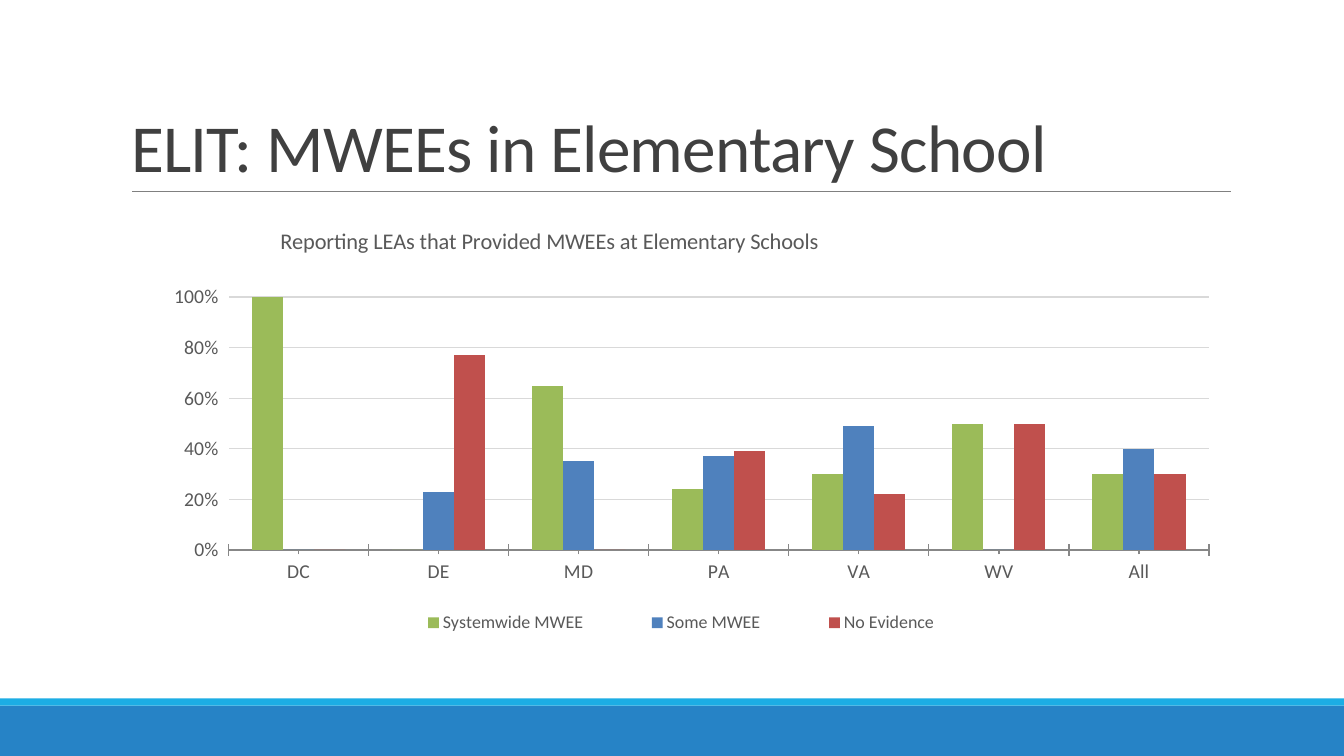
from lxml.etree import SubElement, Element
from pptx import Presentation
from pptx.chart.data import CategoryChartData
from pptx.dml.color import RGBColor
from pptx.enum.chart import XL_CHART_TYPE, XL_LEGEND_POSITION, XL_TICK_MARK
from pptx.enum.shapes import MSO_CONNECTOR, MSO_SHAPE
from pptx.enum.text import MSO_ANCHOR, MSO_AUTO_SIZE, PP_ALIGN
from pptx.oxml.ns import qn
from pptx.util import Inches, Pt

TITLE = "ELIT: MWEEs in Elementary School"
CHART_TITLE = "Reporting LEAs that Provided MWEEs at Elementary Schools"
STATES = ["DC", "DE", "MD", "PA", "VA", "WV", "All"]
EVIDENCE = [  # name, colour key, share per state
    ("Systemwide MWEE", "green", [1, 0, 0.65, 0.24, 0.3, 0.5, 0.3]),
    ("Some MWEE", "blue", [0, 0.23, 0.35, 0.37, 0.49, 0, 0.4]),
    ("No Evidence", "red", [0, 0.77, 0, 0.39, 0.22, 0.5, 0.3]),
]
FOOTER_BANDS = [("band", 7, 0.5), ("stripe", 6.93, 0.07)]  # colour key, top, height

# Fractions of the chart frame: x, y and, where sized, width and height
TITLE_LAYOUT = {"x": 0.14, "y": 0.04}
LEGEND_LAYOUT = {"x": 0.22, "y": 0.9, "w": 0.57, "h": 0.09}
PLOT_LAYOUT = {"x": 0.097, "y": 0.211, "w": 0.884, "h": 0.57}

SLIDE_W, SLIDE_H = 13.33, 7.5
THEME = {
    "font": "Calibri",
    "colors": {
        "band": "2683C6", "stripe": "1CADE4", "rule": "808080",
        "title": "404040", "label": "595959", "axis": "878787", "grid": "D9D9D9",
        "green": "9BBB59", "blue": "4F81BD", "red": "C0504D",
    },
    "sizes": {"title": 48, "chart_title": 16, "axis": 14, "legend": 12.8},
}


def color(key):
    return RGBColor.from_string(THEME["colors"][key])


def style_font(font, size, color_key):
    formats = {"name": THEME["font"], "size": Pt(THEME["sizes"][size]), "bold": False}
    for name, value in formats.items():
        setattr(font, name, value)
    font.color.rgb = color(color_key)


def style_line(line, color_key, width):
    line.color.rgb = color(color_key)
    line.width = Pt(width)


def place(parent, index, fractions, inner=False):
    """Give a chart part a manual layout, inserted as child number index."""
    for old in parent.findall(qn("c:layout")):
        parent.remove(old)
    layout = Element(qn("c:layout"))
    manual = SubElement(layout, qn("c:manualLayout"))
    if inner:
        SubElement(manual, qn("c:layoutTarget")).set("val", "inner")
    for axis in "xy":
        SubElement(manual, qn(f"c:{axis}Mode")).set("val", "edge")
    for name, value in fractions.items():
        SubElement(manual, qn(f"c:{name}")).set("val", str(value))
    parent.insert(index, layout)


def add_frame(slide):
    for key, top, height in FOOTER_BANDS:
        sp = slide.shapes.add_shape(MSO_SHAPE.RECTANGLE, 0, Inches(top),
                                    Inches(SLIDE_W), Inches(height))
        sp.shadow.inherit = False
        sp.fill.solid()
        sp.fill.fore_color.rgb = color(key)
        sp.line.fill.background()
    rule = slide.shapes.add_connector(MSO_CONNECTOR.STRAIGHT, Inches(1.31), Inches(1.9),
                                      Inches(12.21), Inches(1.9))
    style_line(rule.line, "rule", 0.5)
    SubElement(rule.element.spPr, qn("a:effectLst"))


def add_title(slide):
    sp = slide.shapes.title
    box = {"left": 1.2, "top": 0.31, "width": 11, "height": 1.59}
    for name, value in box.items():
        setattr(sp, name, Inches(value))
    tf = sp.text_frame
    formats = {"word_wrap": True, "auto_size": MSO_AUTO_SIZE.NONE,
               "vertical_anchor": MSO_ANCHOR.BOTTOM}
    for name, value in formats.items():
        setattr(tf, name, value)
    p = tf.paragraphs[0]
    p.alignment = PP_ALIGN.LEFT
    p.line_spacing = 0.85
    r = p.add_run()
    r.text = TITLE
    style_font(r.font, "title", "title")
    r.font.element.set("spc", "-50") if hasattr(r.font, "element") else \
        p.runs[0].text and p.font and r.font


def add_evidence_chart(slide):
    data = CategoryChartData(number_format="0%")
    data.categories = STATES
    for name, _, shares in EVIDENCE:
        data.add_series(name, shares)
    chart = slide.shapes.add_chart(XL_CHART_TYPE.COLUMN_CLUSTERED, Inches(1.2), Inches(2.02),
                                   Inches(11), Inches(4.4), data).chart
    style_font(chart.font, "axis", "label")

    plot = chart.plots[0]
    for name, value in {"gap_width": 150, "overlap": 0, "vary_by_categories": False}.items():
        setattr(plot, name, value)
    for series, (_, key, _) in zip(plot.series, EVIDENCE):
        series.format.fill.solid()
        series.format.fill.fore_color.rgb = color(key)

    states, shares = chart.category_axis, chart.value_axis
    for axis in (states, shares):
        axis.major_tick_mark = XL_TICK_MARK.CROSS
        style_font(axis.tick_labels.font, "axis", "label")
    states.minor_tick_mark = XL_TICK_MARK.OUTSIDE
    style_line(states.format.line, "axis", 1)
    scale = {"minimum_scale": 0, "maximum_scale": 1, "major_unit": 0.2}
    for name, value in scale.items():
        setattr(shares, name, value)
    shares.tick_labels.number_format = "0%"
    shares.tick_labels.number_format_is_linked = False
    shares.format.line.fill.background()
    style_line(shares.major_gridlines.format.line, "grid", 1)

    chart.has_title = True
    p = chart.chart_title.text_frame.paragraphs[0]
    r = p.add_run()
    r.text = CHART_TITLE
    style_font(r.font, "chart_title", "label")

    chart.has_legend = True
    chart.legend.position = XL_LEGEND_POSITION.BOTTOM
    chart.legend.include_in_layout = False
    style_font(chart.legend.font, "legend", "label")

    root = chart.element.find(qn("c:chart"))
    place(root.find(qn("c:title")), 1, TITLE_LAYOUT)
    place(root.find(qn("c:legend")), 1, LEGEND_LAYOUT)
    place(root.find(qn("c:plotArea")), 0, PLOT_LAYOUT, inner=True)


def main():
    prs = Presentation()
    prs.slide_width, prs.slide_height = Inches(SLIDE_W), Inches(SLIDE_H)
    slide = prs.slides.add_slide(prs.slide_layouts[5])
    add_frame(slide)
    add_title(slide)
    for props in slide.shapes.title.element.iter(qn("a:rPr")):
        props.set("spc", "-50")
    add_evidence_chart(slide)
    prs.save("out.pptx")


if __name__ == "__main__":
    main()
